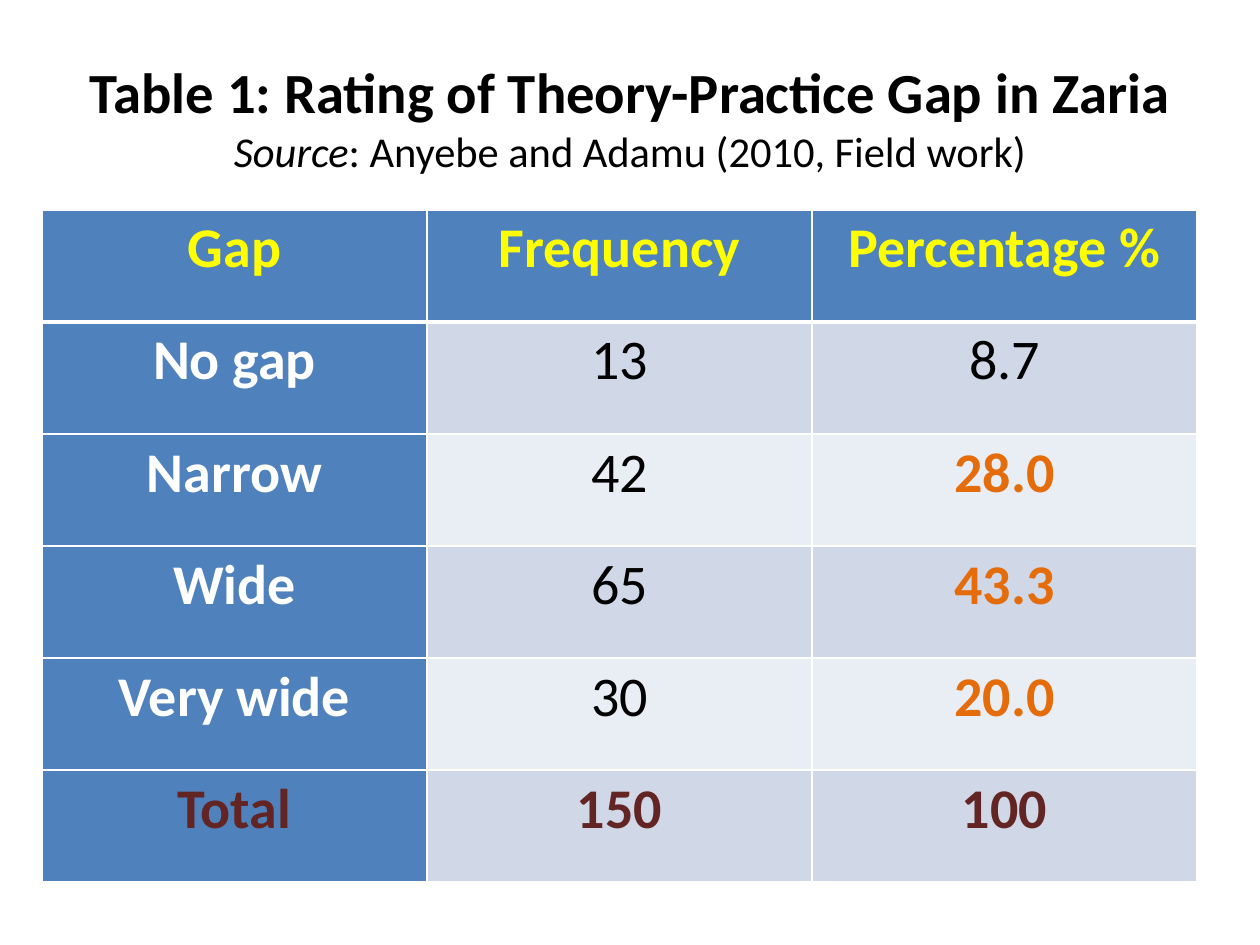
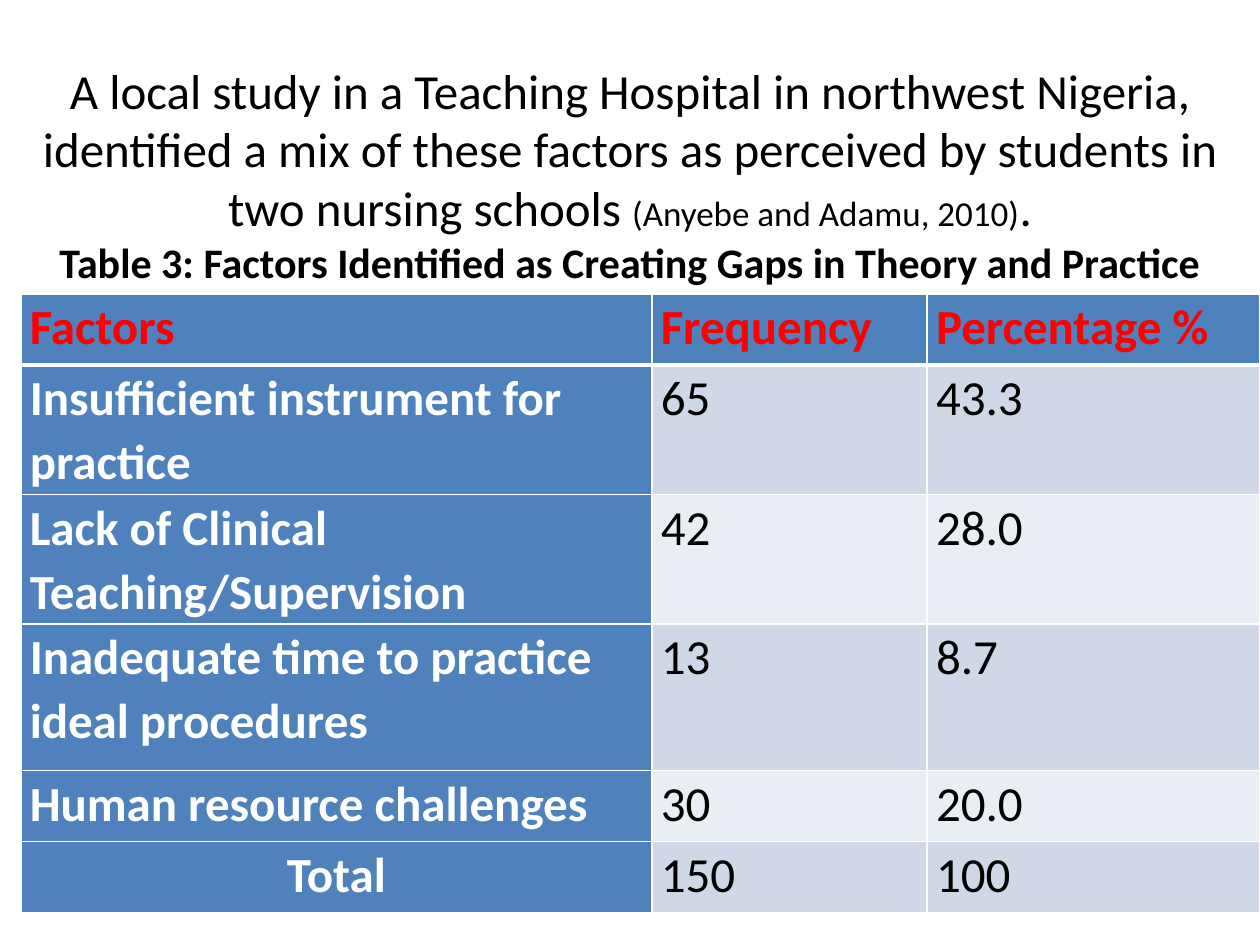
import pptx
import pptx.util
import pptx.dml.color
import pptx.enum.text
import pptx.oxml
import pptx.oxml.ns

Cm, Pt = pptx.util.Cm, pptx.util.Pt
ALIGN = pptx.enum.text.PP_ALIGN
FONT = "Calibri"
COLORS = {
    "text": "000000", "white": "FFFFFF", "blue": "4F81BD",
    "band_dark": "D0D8E8", "band_light": "E9EDF4",
    "yellow": "FFFF00", "red": "FF0000", "orange": "E46C0A", "maroon": "632523",
}


def rgb(name):
    return pptx.dml.color.RGBColor.from_string(COLORS[name])


def add_run(p, text, size=28, color="text", bold=False, italic=False):
    r = p.add_run()
    r.text = text
    r.font.name = FONT
    r.font.size = Pt(size)
    r.font.color.rgb = rgb(color)
    r.font.bold = bold
    r.font.italic = italic


def add_title(s, box, lines):
    """Centre the lines in the box; each line is a list of (text, format)."""
    tf = s.shapes.add_textbox(*(Cm(v) for v in box)).text_frame
    tf.word_wrap = True
    tf.vertical_anchor = pptx.enum.text.MSO_ANCHOR.MIDDLE
    for i, runs in enumerate(lines):
        p = tf.add_paragraph() if i else tf.paragraphs[0]
        p.alignment = ALIGN.CENTER
        for text, style in runs:
            add_run(p, text, **style)


def set_borders(cell, top=1, bottom=1):
    tcPr = cell._tc.get_or_add_tcPr()
    for side, width in zip("LRTB", (1, 1, top, bottom)):
        tcPr.append(pptx.oxml.parse_xml(
            f'<a:ln{side} {pptx.oxml.ns.nsdecls("a")} w="{Pt(width)}"><a:solidFill>'
            f'<a:srgbClr val="{COLORS["white"]}"/></a:solidFill></a:ln{side}>'))


def cell_fill(row, col):
    if row == 0 or col == 0:
        return "blue"
    return "band_dark" if row % 2 else "band_light"


def add_data_table(s, left, top, widths, heights, rows, size, header_color,
                   align=ALIGN.LEFT, accents=None, total_align=None):
    """Draw the table; accents maps (row, column) to a bold text colour."""
    accents = accents or {}
    table = s.shapes.add_table(len(rows), len(widths), Cm(left), Cm(top),
                               Cm(sum(widths)), Cm(sum(heights))).table
    table.horz_banding = False
    for column, width in zip(table.columns, widths):
        column.width = Cm(width)
    for row, height in zip(table.rows, heights):
        row.height = Cm(height)
    for i, values in enumerate(rows):
        for j, value in enumerate(values):
            cell = table.cell(i, j)
            set_borders(cell, top=3 if i == 1 else 1, bottom=3 if i == 0 else 1)
            cell.fill.solid()
            cell.fill.fore_color.rgb = rgb(cell_fill(i, j))
            cell.margin_left = cell.margin_right = Cm(0.18)
            cell.margin_top = cell.margin_bottom = 0
            p = cell.text_frame.paragraphs[0]
            p.line_spacing = 1.07
            p.alignment = align
            if total_align is not None and (i, j) == (len(rows) - 1, 0):
                p.alignment = total_align
            base = header_color if i == 0 else "text" if j else "white"
            add_run(p, value, size=size, color=accents.get((i, j), base),
                    bold=i == 0 or j == 0 or (i, j) in accents)


def rating_slide(prs):
    s = prs.slides.add_slide(prs.slide_layouts[6])
    add_title(s, (1.27, 0.76, 22.86, 3.18), [
        [("Table 1: Rating of Theory-Practice Gap in Zaria", dict(size=32.4, bold=True))],
        [("Source", dict(size=24.3, italic=True)),
         (": Anyebe and Adamu (2010, Field work)", dict(size=24.3))],
    ])
    rows = [
        ("Gap", "Frequency", "Percentage %"),
        ("No gap", "13", "8.7"),
        ("Narrow", "42", "28.0"),
        ("Wide", "65", "43.3"),
        ("Very wide", "30", "20.0"),
        ("Total", "150", "100"),
    ]
    accents = {(i, 2): "orange" for i in (2, 3, 4)}
    accents.update({(5, j): "maroon" for j in range(3)})
    add_data_table(s, 0.85, 4.23, [7.76] * 3, [2.26] * 6, rows, size=32,
                   header_color="yellow", align=ALIGN.CENTER, accents=accents)


def factors_slide(prs):
    s = prs.slides.add_slide(prs.slide_layouts[6])
    add_title(s, (0.42, 0.81, 24.56, 5.38), [
        [("A local study in a Teaching Hospital in northwest Nigeria, identified a mix of "
          "these factors as perceived by students in two nursing schools ", {}),
         ("(Anyebe and Adamu, 2010)", dict(size=20)), (".", {})],
        [("Table 3: Factors Identified as Creating Gaps in Theory and Practice",
          dict(size=24, bold=True))],
    ])
    rows = [
        ("Factors", "Frequency", "Percentage %"),
        ("Insufficient instrument for practice", "65", "43.3"),
        ("Lack of Clinical Teaching/Supervision", "42", "28.0"),
        ("Inadequate time to practice ideal procedures", "13", "8.7"),
        ("Human resource challenges", "30", "20.0"),
        ("Total", "150", "100"),
    ]
    add_data_table(s, 0.42, 5.93, [12.72, 5.55, 6.71],
                   [1.43, 2.61, 2.61, 2.95, 1.43, 1.43], rows, size=28,
                   header_color="red", total_align=ALIGN.CENTER)


def main():
    prs = pptx.Presentation()
    prs.slide_width, prs.slide_height = Cm(25.4), Cm(19.05)
    rating_slide(prs)
    factors_slide(prs)
    prs.save("out.pptx")


if __name__ == "__main__":
    main()
